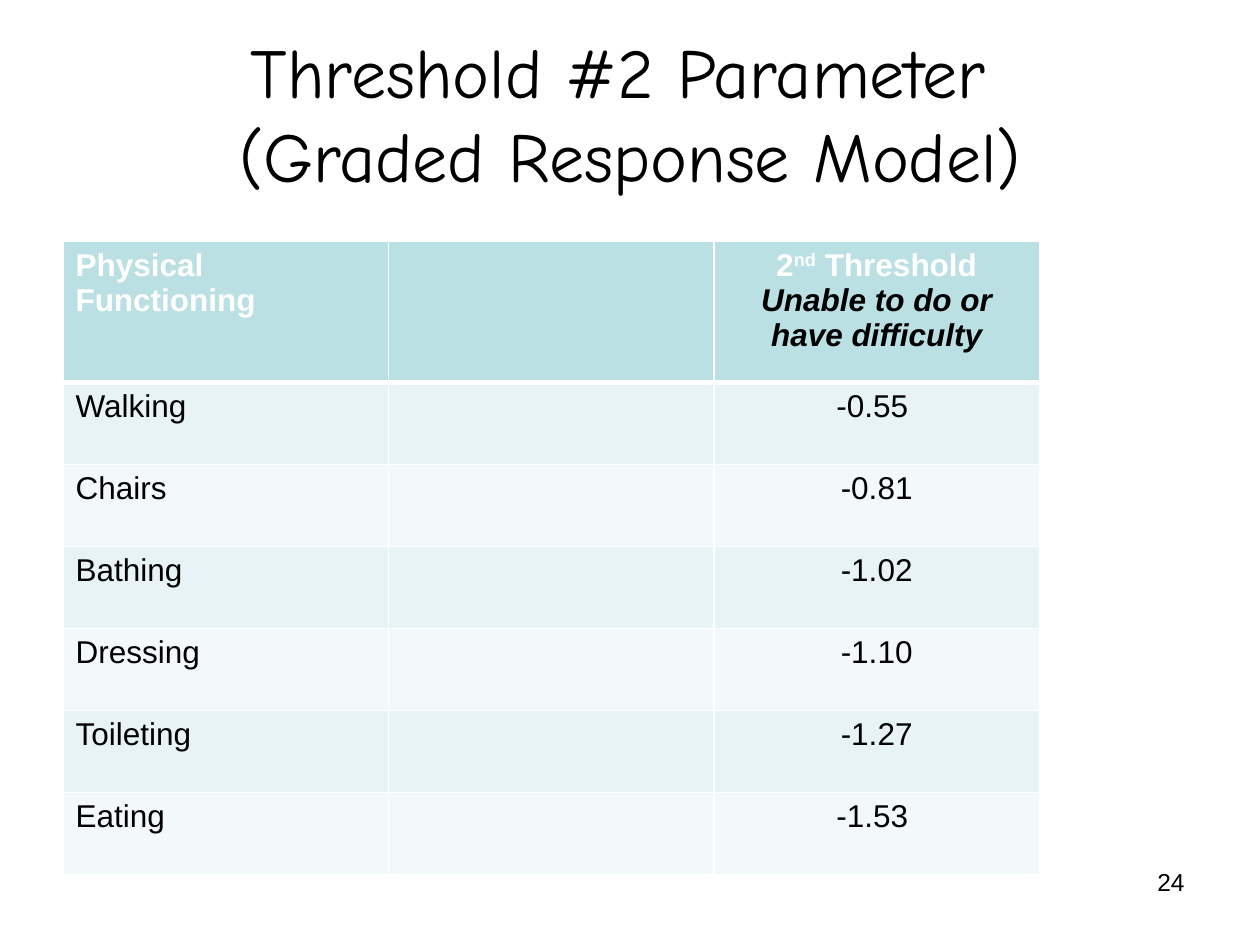
from pptx import Presentation
from pptx.dml.color import RGBColor
from pptx.enum.text import MSO_ANCHOR as Anchor, PP_ALIGN as Align
from pptx.oxml.ns import qn
from pptx.util import Pt
from lxml.etree import SubElement

COLORS = {"text": "000000", "white": "FFFFFF", "header": "BBE0E3",
          "odd": "E7F3F4", "even": "F3F9FA"}
ITEMS = [("Walking", "-0.55 "), ("Chairs", "-0.81"), ("Bathing", "-1.02"),
         ("Dressing", "-1.10"), ("Toileting", "-1.27"), ("Eating", "-1.53 ")]


def rgb(name):
    return RGBColor.from_string(COLORS[name])


class Deck:
    def __init__(self, slide, font="Arial"):
        self.slide = slide
        self.font = font

    def run(self, p, text, size=18, color="text", font=None,
            bold=False, italic=False, baseline=None):
        r = p.add_run()
        r.text = text
        f = r.font
        f.name, f.size, f.bold, f.italic = font or self.font, Pt(size), bold, italic
        f.color.rgb = rgb(color)
        if baseline:
            r._r.get_or_add_rPr().set("baseline", str(baseline))

    def text(self, box, lines, align, anchor=Anchor.TOP, **style):
        tf = self.slide.shapes.add_textbox(*map(Pt, box)).text_frame
        tf.word_wrap = True
        tf.vertical_anchor = anchor
        p = tf.paragraphs[0]
        p.alignment = align
        for i, line in enumerate(lines):
            if i:
                p.add_line_break()
            self.run(p, line, **style)

    def table(self, left, top, widths, heights):
        table = self.slide.shapes.add_table(
            len(heights), len(widths), Pt(left), Pt(top),
            Pt(sum(widths)), Pt(sum(heights))).table
        for col, width in zip(table.columns, widths):
            col.width = Pt(width)
        for row, height in zip(table.rows, heights):
            row.height = Pt(height)
        return table

    def cell(self, cell, fill, bottom=1, top=1):
        pr = cell._tc.get_or_add_tcPr()
        for side, width in (("L", 1), ("R", 1), ("T", top), ("B", bottom)):
            ln = SubElement(pr, qn(f"a:ln{side}"), w=str(Pt(width)))
            solid = SubElement(ln, qn("a:solidFill"))
            SubElement(solid, qn("a:srgbClr"), val=COLORS["white"])
        cell.fill.solid()
        cell.fill.fore_color.rgb = rgb(fill)

    def cell_text(self, cell, paragraphs, align=Align.LEFT):
        tf = cell.text_frame
        for i, runs in enumerate(paragraphs):
            p = tf.add_paragraph() if i else tf.paragraphs[0]
            p.alignment = align
            for text, style in runs:
                self.run(p, text, **style)


def main():
    prs = Presentation()
    prs.slide_width, prs.slide_height = Pt(720), Pt(540)
    deck = Deck(prs.slides.add_slide(prs.slide_layouts[6]))

    # Title
    deck.text((0, 19.5, 720, 90),
              ["Threshold #2 Parameter ", "(Graded Response Model)"],
              Align.CENTER, Anchor.MIDDLE, size=40, font="Comic Neue")

    # Table grid
    table = deck.table(36, 138, [186] * 3, [80.5] + [46.9] * len(ITEMS))
    for i, row in enumerate(table.rows):
        fill = "header" if i == 0 else "odd" if i % 2 else "even"
        for cell in row.cells:
            deck.cell(cell, fill, bottom=1 if i else 3, top=3 if i == 1 else 1)

    # Header row
    head = {"color": "white", "bold": True}
    deck.cell_text(table.cell(0, 0), [[("Physical Functioning", head)]])
    deck.cell_text(table.cell(0, 2), [
        [("2", head), ("nd", {**head, "baseline": 30000}), (" Threshold", head)],
        [("Unable to do or have difficulty", {"bold": True, "italic": True})],
    ], Align.CENTER)

    # Item rows
    for i, (item, threshold) in enumerate(ITEMS, 1):
        deck.cell_text(table.cell(i, 0), [[(item, {})]])
        deck.cell_text(table.cell(i, 2), [[(threshold, {})]], Align.CENTER)

    # Slide number
    deck.text((516, 492, 168, 37.5), ["24"], Align.RIGHT, size=14)

    prs.save("out.pptx")


if __name__ == "__main__":
    main()
